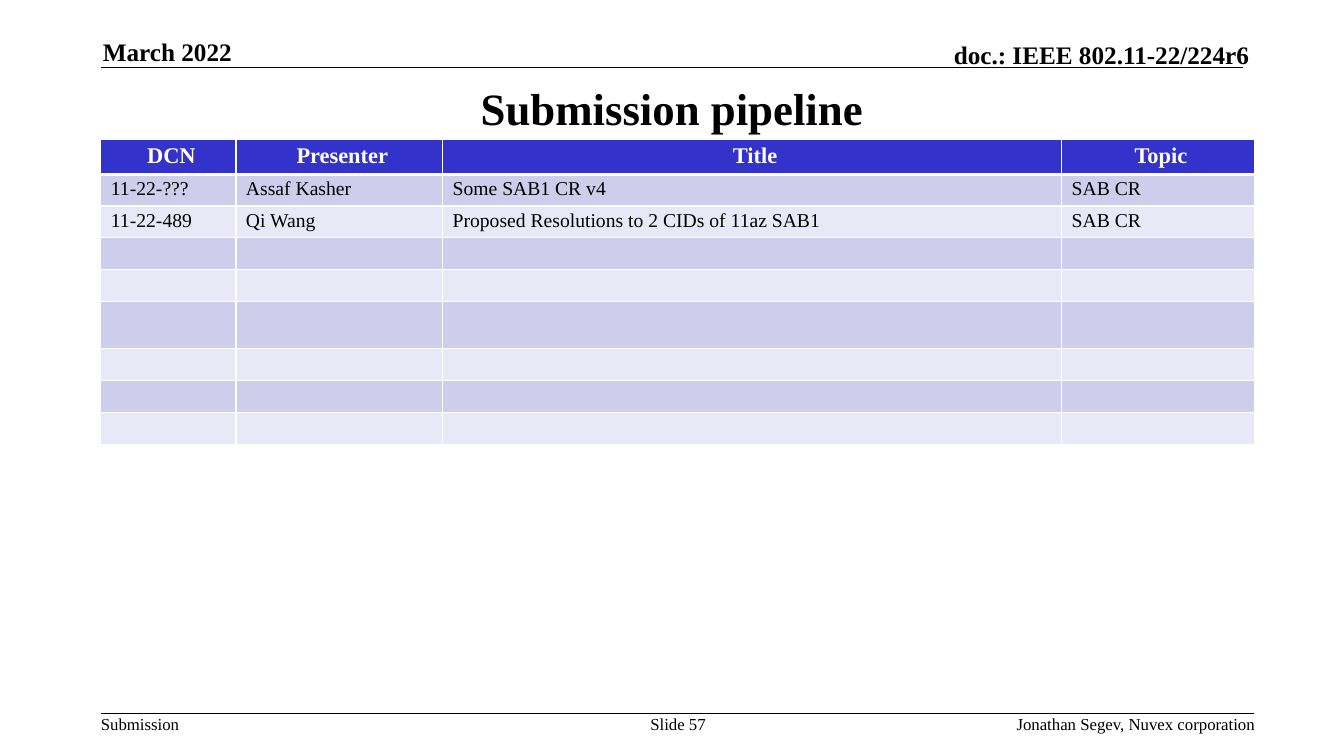
"""Build the submission pipeline slide with its header, footer and table."""
from dataclasses import dataclass

from lxml.etree import SubElement
from pptx import Presentation
from pptx.dml.color import RGBColor
from pptx.enum.text import MSO_ANCHOR as Anchor, PP_ALIGN as Align
from pptx.oxml.ns import qn
from pptx.util import Inches, Pt

FONT = "Times New Roman"
BLACK, WHITE, HEADER_BLUE = "000000", "FFFFFF", "3333CC"
BANDS = ("CECEEC", "E8E8F6")
COLUMN_WIDTHS = (1.34, 2.05, 6.14, 1.91)
ROW_HEIGHTS = (0.35, 0.31, 0.31, 0.32, 0.31, 0.47, 0.31, 0.32, 0.31)
ENTRIES = (
    ("DCN", "Presenter", "Title", "Topic"),
    ("11-22-???", "Assaf Kasher", "Some SAB1 CR v4", "SAB CR"),
    ("11-22-489", "Qi Wang", "Proposed Resolutions to 2 CIDs of 11az SAB1", "SAB CR"),
)


@dataclass
class Label:
    text: str
    left: float
    top: float
    width: float
    height: float
    align: Align = Align.LEFT
    size: int = 12
    bold: bool = False
    anchor: Anchor = Anchor.TOP
    wrap: bool = True


@dataclass
class Rule:
    left: float
    right: float
    y: float


LABELS = (
    Label("March 2022", 1.02, 0.36, 2.73, 0.3, size=18, bold=True, anchor=Anchor.BOTTOM),
    Label("doc.: IEEE 802.11-22/224r6", 7.29, 0.39, 5.1, 0.3, Align.RIGHT, 18, True, Anchor.BOTTOM),
    Label("Submission", 1, 7.08, 0.79, 0.2, wrap=False),
    Label("Slide 57", 6.34, 7.08, 0.77, 0.4, Align.CENTER),
    Label("Jonathan Segev, Nuvex corporation", 7.81, 7.08, 4.64, 0.2, Align.RIGHT),
)
RULES = (Rule(1, 12.33, 0.67), Rule(1, 12.44, 7.08))


def rgb(value: str) -> RGBColor:
    return RGBColor.from_string(value)


def style_text(frame, size: int, color: str, bold: bool, align: Align) -> None:
    paragraph = frame.paragraphs[0]
    paragraph.alignment = align
    for run in paragraph.runs:
        run.font.name = FONT
        run.font.size = Pt(size)
        run.font.bold = bold
        run.font.color.rgb = rgb(color)


def set_margins(frame, horizontal: float, vertical: float) -> None:
    frame.margin_left = frame.margin_right = Inches(horizontal)
    frame.margin_top = frame.margin_bottom = Inches(vertical)


def draw_rule(slide, rule: Rule) -> None:
    line = slide.shapes.add_connector(
        1, Inches(rule.left), Inches(rule.y), Inches(rule.right), Inches(rule.y)
    )
    line.line.color.rgb = rgb(BLACK)
    line.line.width = Pt(1)
    SubElement(line._element.spPr, qn("a:effectLst"))


def draw_label(slide, label: Label) -> None:
    box = slide.shapes.add_textbox(
        Inches(label.left), Inches(label.top), Inches(label.width), Inches(label.height)
    )
    frame = box.text_frame
    frame.text = label.text
    frame.word_wrap = label.wrap
    frame.vertical_anchor = label.anchor
    set_margins(frame, 0, 0)
    style_text(frame, label.size, BLACK, label.bold, label.align)


def draw_title(slide) -> None:
    title = slide.shapes.title
    title.left, title.top = Inches(1), Inches(0.75)
    title.width, title.height = Inches(11.33), Inches(0.64)
    frame = title.text_frame
    frame.text = "Submission pipeline"
    frame.vertical_anchor = Anchor.MIDDLE
    set_margins(frame, 0.1, 0.05)
    style_text(frame, 32, BLACK, True, Align.CENTER)


def set_borders(cell, top: int, bottom: int) -> None:
    properties = cell._tc.get_or_add_tcPr()
    for side, width in (("L", 1), ("R", 1), ("T", top), ("B", bottom)):
        border = SubElement(properties, qn(f"a:ln{side}"), w=str(Pt(width)))
        fill = SubElement(border, qn("a:solidFill"))
        SubElement(fill, qn("a:srgbClr"), val=WHITE)


def fill_cell(cell, row: int, text: str) -> None:
    is_header = row == 0
    set_borders(cell, top=3 if row == 1 else 1, bottom=3 if is_header else 1)
    cell.fill.solid()
    cell.fill.fore_color.rgb = rgb(HEADER_BLUE if is_header else BANDS[(row - 1) % 2])
    set_margins(cell, 0.1, 0.04)
    if is_header:
        cell.margin_right = Inches(0.04)
    if text:
        cell.text_frame.text = text
        style_text(
            cell.text_frame,
            16 if is_header else 14,
            WHITE if is_header else BLACK,
            is_header,
            Align.CENTER if is_header else Align.LEFT,
        )
    else:
        SubElement(cell.text_frame.paragraphs[0]._p, qn("a:endParaRPr"), sz="1400")


def draw_pipeline(slide) -> None:
    pipeline = slide.shapes.add_table(
        len(ROW_HEIGHTS), len(COLUMN_WIDTHS), Inches(1), Inches(1.38),
        Inches(sum(COLUMN_WIDTHS)), Inches(sum(ROW_HEIGHTS)),
    ).table
    for column, width in zip(pipeline.columns, COLUMN_WIDTHS):
        column.width = Inches(width)
    for index, height in enumerate(ROW_HEIGHTS):
        pipeline.rows[index].height = Inches(height)
        texts = ENTRIES[index] if index < len(ENTRIES) else ("",) * len(COLUMN_WIDTHS)
        for cell, text in zip(pipeline.rows[index].cells, texts):
            fill_cell(cell, index, text)


def main() -> None:
    deck = Presentation()
    deck.slide_width, deck.slide_height = Inches(13.33), Inches(7.5)
    slide = deck.slides.add_slide(deck.slide_layouts[5])
    for rule in RULES:
        draw_rule(slide, rule)
    draw_title(slide)
    for label in LABELS:
        draw_label(slide, label)
    draw_pipeline(slide)
    deck.save("out.pptx")


if __name__ == "__main__":
    main()
